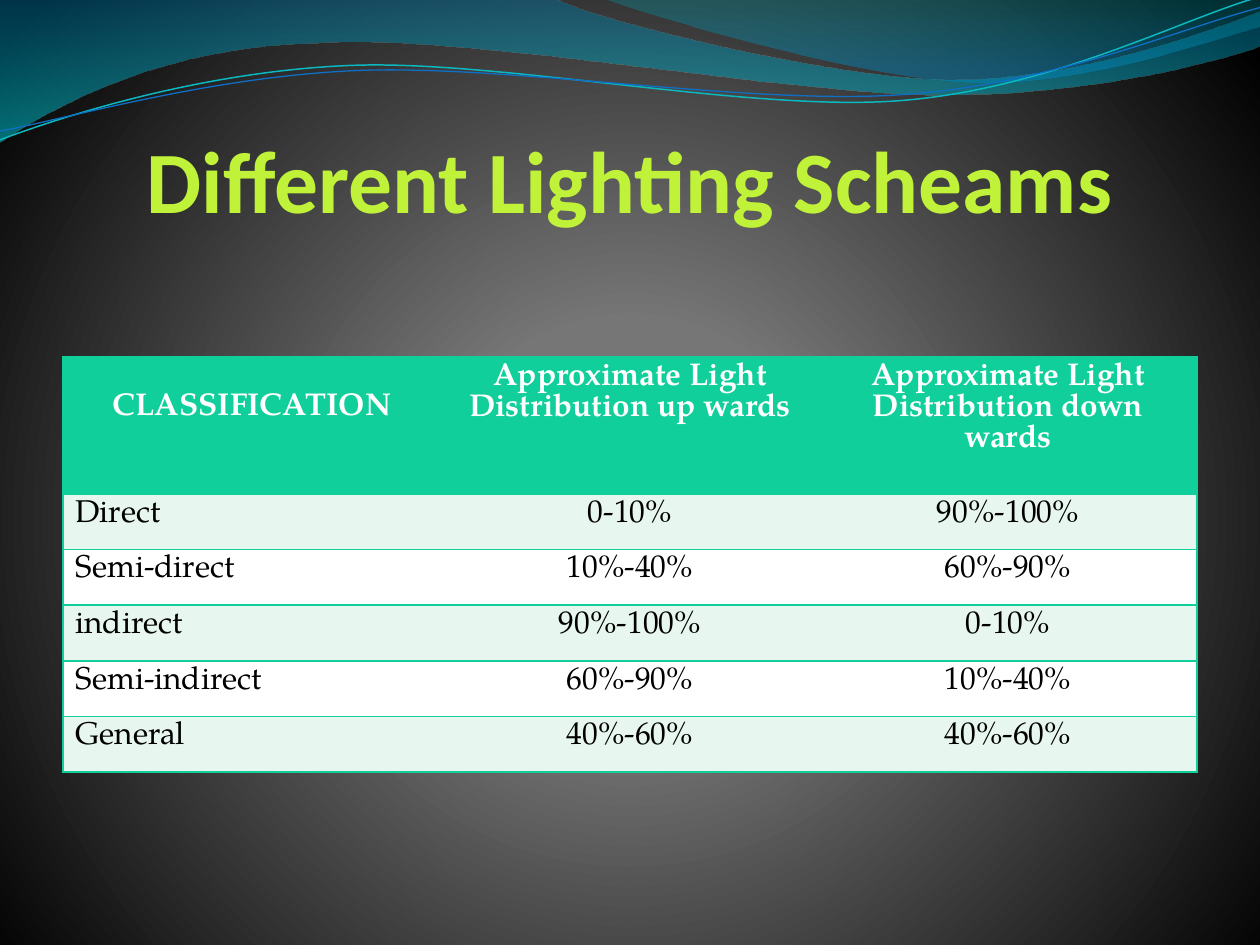
from math import cos, radians, sin

from pptx import Presentation
from pptx.dml.color import RGBColor
from pptx.enum.text import MSO_ANCHOR, PP_ALIGN
from pptx.oxml import parse_xml
from pptx.oxml.ns import nsdecls, qn
from pptx.util import Inches, Pt

HUES = {
    "lime": "BFF238", "green": "10CF9B", "mint": "E7F6EF",
    "white": "FFFFFF", "black": "000000", "grey": "7F7F7F", "ash": "767676",
    "sea": "0074A1", "aqua": "00C6CF", "teal": "00A1A9", "sky": "008BBF",
    "cyan": "0AB8BF", "blue": "0F6FC6",
}
DOWN = '<a:lin ang="5400000" scaled="1"/>'
ROUND = ('<a:path path="circle"><a:fillToRect l="10000" t="110000" '
         'r="10000" b="100000"/></a:path>')

ROWS = [
    ("CLASSIFICATION", "Approximate Light Distribution up wards",
     "Approximate Light Distribution down wards"),
    ("Direct", "0-10%", "90%-100%"),
    ("Semi-direct", "10%-40%", "60%-90%"),
    ("indirect", "90%-100%", "0-10%"),
    ("Semi-indirect", "60%-90%", "10%-40%"),
    ("General", "40%-60%", "40%-60%"),
]

BANDS = [
    ((0, 0), [
        [(4.4, -0.01)],
        [(4.76, 0.17), (6.64, 0.63), (7.58, 0.63)],
        [(8.53, 0.63), (9.58, 0.26), (10, 0.09)],
        [(10.01, 0.36)],
        [(9.83, 0.44), (8.7, 0.76), (7.46, 0.75)],
        [(6.22, 0.75), (3.82, 0.28), (2.57, 0.34)],
        [(1.29, 0.36), (0.46, 0.83), (-0.01, 1.13)],
    ], [(0, "sea", 45), (100, "aqua", 55)]),
    ((4.79, -0.01), [
        [(5.09, 0.11), (6.82, 0.62), (7.69, 0.65)],
        [(8.56, 0.69), (9.61, 0.32), (10, 0.21)],
        [(10, 0)],
    ], [(0, "teal", 30), (80, "sky", 45)]),
]
WAVES = [
    ((0, 1.11), [
        [(0.48, 0.93), (1.58, 0.57), (2.77, 0.52)],
        [(3.95, 0.47), (5.93, 0.89), (7.13, 0.8)],
        [(8.33, 0.71), (9.38, 0.15), (9.98, -0.02)],
    ], "cyan", 0.85),
    ((0, 1.04), [
        [(0.47, 0.96), (1.64, 0.61), (2.83, 0.56)],
        [(4.03, 0.51), (5.97, 0.84), (7.17, 0.75)],
        [(8.36, 0.67), (9.41, 0.21), (10, 0.06)],
    ], "blue", 0.75),
]


def tint(name):
    return RGBColor.from_string(HUES[name])


def blend(stops, way):
    marks = "".join(
        f'<a:gs pos="{pos * 1000}"><a:srgbClr val="{HUES[hue]}">'
        f'<a:alpha val="{part * 1000}"/></a:srgbClr></a:gs>'
        for pos, hue, part in stops)
    return (f'<a:gradFill {nsdecls("a")} rotWithShape="1">'
            f'<a:gsLst>{marks}</a:gsLst>{way}</a:gradFill>')


def turn(spot, angle, hub=(4.99, 0.58)):
    dx, dy = spot[0] - hub[0], spot[1] - hub[1]
    c, s = cos(radians(angle)), sin(radians(angle))
    return hub[0] + dx * c - dy * s, hub[1] + dx * s + dy * c


def write(frame, text, font, size, hue, bold=False, align=PP_ALIGN.CENTER, lead=None):
    frame.word_wrap = True
    para = frame.paragraphs[0]
    para.alignment = align
    para.space_before = Pt(0)
    if lead:
        para.line_spacing = Pt(lead)
    run = para.add_run()
    run.text = text
    run.font.name, run.font.size, run.font.bold = font, Pt(size), bold
    run.font.color.rgb = tint(hue)


class Deck:
    head, body = "Calibri", "TeX Gyre Pagella"
    cols, rows = 10, 7.5

    def __init__(self):
        self.file = Presentation()
        self.file.slide_width, self.file.slide_height = Inches(10), Inches(7.5)
        self.slide = self.file.slides.add_slide(self.file.slide_layouts[5])

    def x(self, col):
        return round(self.file.slide_width * col / self.cols)

    def y(self, row):
        return round(self.file.slide_height * row / self.rows)

    def ground(self, stops):
        self.slide.element.cSld.insert(0, parse_xml(
            f'<p:bg {nsdecls("p", "a")}><p:bgPr>{blend(stops, ROUND)}'
            '<a:effectLst/></p:bgPr></p:bg>'))

    def shape(self, start, parts, close, tilt=0):
        spots = [[(self.x(a), self.y(b)) for a, b in (turn(p, -tilt) for p in part)]
                 for part in [[start], *parts]]
        pen = self.slide.shapes.build_freeform(*spots[0][0], scale=1.0)
        pen.add_line_segments([part[-1] for part in spots[1:]], close=close)
        shape = pen.convert_to_shape()
        lines = list(shape.element.spPr.iter(qn("a:lnTo")))
        for line, part in zip(lines, spots[1:]):
            if len(part) == 3:
                knots = "".join(f'<a:pt x="{a - shape.left}" y="{b - shape.top}"/>'
                                for a, b in part)
                line.getparent().replace(line, parse_xml(
                    f'<a:cubicBezTo {nsdecls("a")}>{knots}</a:cubicBezTo>'))
        shape.rotation = tilt
        shape.shadow.inherit = False
        shape.fill.background()
        return shape

    def band(self, start, parts, stops):
        shape = self.shape(start, parts, True)
        shape.line.fill.background()
        props = shape.element.spPr
        props.replace(props.find(qn("a:noFill")), parse_xml(blend(stops, DOWN)))

    def wave(self, start, parts, hue, width):
        line = self.shape(start, parts, False, tilt=-2.7).line
        line.color.rgb, line.width = tint(hue), Pt(width)

    def title(self, text):
        box = self.slide.shapes.title
        box.left, box.top = self.x(0.5), self.y(0.58)
        box.width, box.height = self.x(9), self.y(1.25)
        frame = box.text_frame
        frame.vertical_anchor = MSO_ANCHOR.BOTTOM
        frame.margin_left = frame.margin_right = frame.margin_bottom = 0
        frame.margin_top = Inches(0.05)
        write(frame, text, self.head, 50, "lime", bold=True)
        self.slide.shapes.element.append(box.element)

    def edge(self, cell, sides):
        props = cell._tc.get_or_add_tcPr()
        for side in "LRTB":
            paint = (f'<a:solidFill><a:srgbClr val="{HUES["green"]}"/></a:solidFill>'
                     if side in sides else "<a:noFill/>")
            props.append(parse_xml(
                f'<a:ln{side} {nsdecls("a")} w="{Pt(1)}">{paint}</a:ln{side}>'))

    def table(self, data, high=3.3, tops=1.09):
        count, width = len(data), len(data[0])
        each = (high - tops) / (count - 1)
        grid = self.slide.shapes.add_table(
            count, width, self.x(0.5), self.y(2.83), self.x(9), self.y(high)).table
        grid.horz_banding = grid.first_row = False
        for r, texts in enumerate(data):
            grid.rows[r].height = self.y(each if r else tops)
            for c, text in enumerate(texts):
                cell = grid.cell(r, c)
                sides = "TB" + "L" * (c == 0) + "R" * (c == width - 1)
                self.edge(cell, sides)
                cell.fill.solid()
                cell.fill.fore_color.rgb = tint(
                    "green" if r == 0 else "mint" if r % 2 else "white")
                cell.margin_top = Inches(0.05 if r or c else 0.29)
                write(cell.text_frame, text, self.body, 18,
                      "black" if r else "white", bold=r == 0, lead=17.7,
                      align=PP_ALIGN.LEFT if r and c == 0 else PP_ALIGN.CENTER)


def main():
    deck = Deck()
    deck.ground([(0, "grey", 100), (25, "ash", 100), (100, "black", 100)])
    for band in BANDS:
        deck.band(*band)
    for wave in WAVES:
        deck.wave(*wave)
    deck.title("Different Lighting Scheams")
    deck.table(ROWS)
    deck.file.save("out.pptx")


if __name__ == "__main__":
    main()
